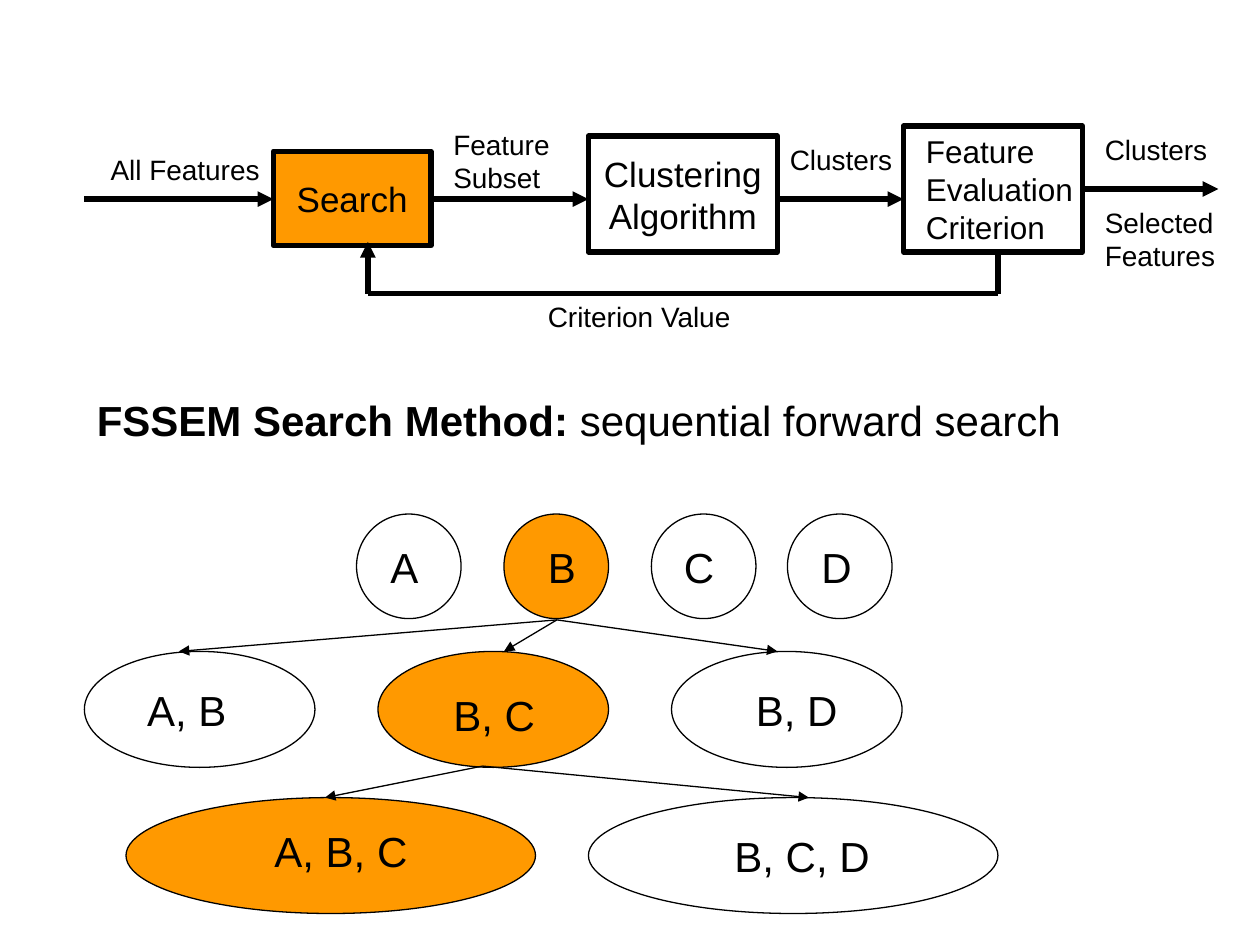
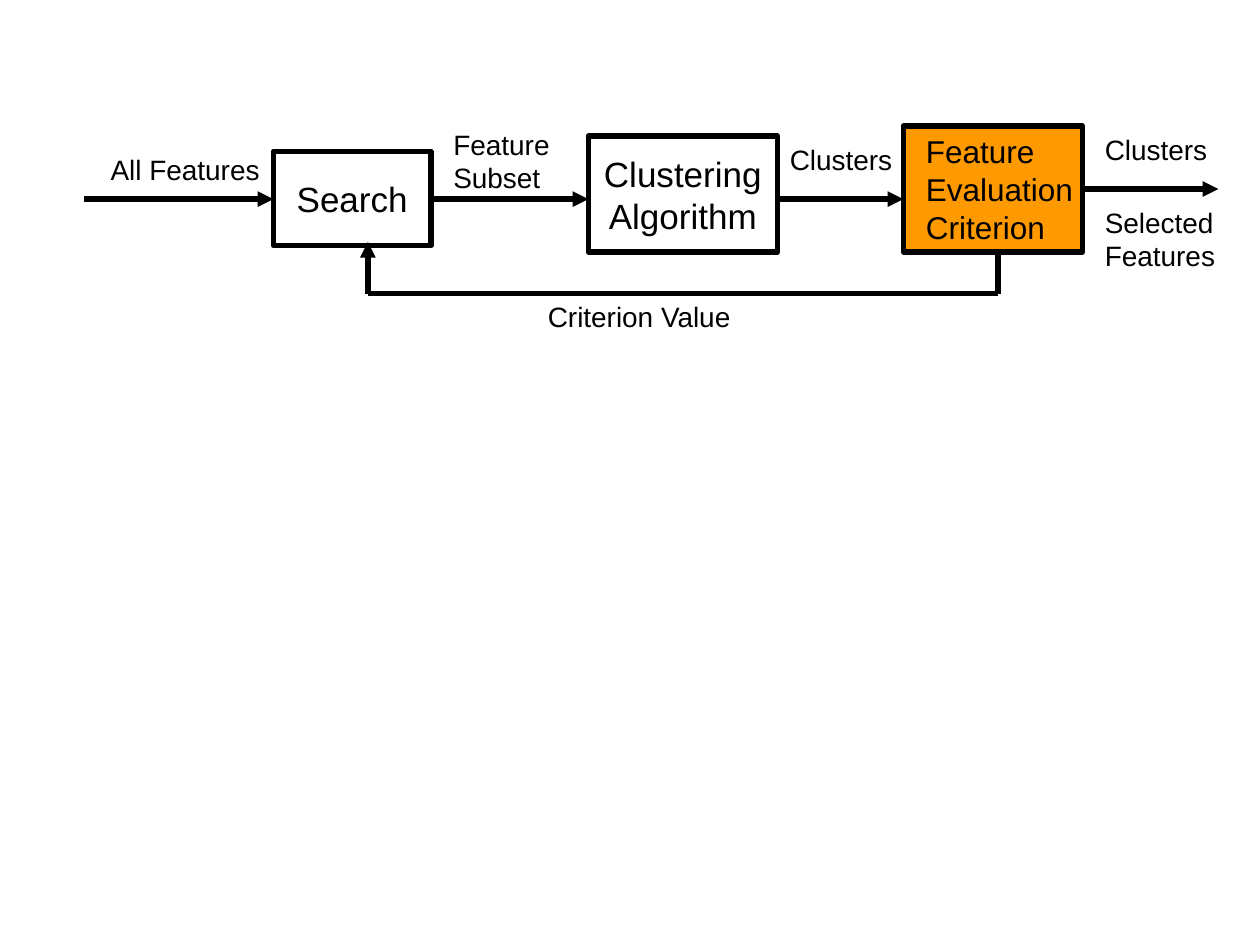
from dataclasses import dataclass

from lxml import etree
from pptx import Presentation
from pptx.dml.color import RGBColor
from pptx.enum.shapes import MSO_CONNECTOR, MSO_SHAPE
from pptx.enum.text import MSO_ANCHOR, MSO_AUTO_SIZE, PP_ALIGN
from pptx.oxml.ns import qn
from pptx.util import Inches, Pt

RECT, OVAL = MSO_SHAPE.RECTANGLE, MSO_SHAPE.OVAL
LINE = MSO_CONNECTOR.STRAIGHT
LEFT, CENTER = PP_ALIGN.LEFT, PP_ALIGN.CENTER
TOP, MIDDLE = MSO_ANCHOR.TOP, MSO_ANCHOR.MIDDLE
FIT, FIXED = MSO_AUTO_SIZE.SHAPE_TO_FIT_TEXT, MSO_AUTO_SIZE.NONE


@dataclass(frozen=True)
class Theme:
    ink: RGBColor = RGBColor(0, 0, 0)
    accent: RGBColor = RGBColor(0xFF, 0x99, 0x00)
    font: str = "Arial"
    label: int = 16
    small: int = 18
    box: int = 20
    head: int = 24
    thick: float = 3
    thin: float = 0.75


THEME = Theme()

# Flow chart: stage name -> (left, top, width, height), centred lines
STAGES = {
    "search": ((2.17, 1.2, 1.25, 0.75), ["Search"]),
    "judge": ((7.17, 1, 1.42, 1), []),
    "cluster": ((4.67, 1.08, 1.5, 0.92), ["Clustering", "Algorithm"]),
}
JUDGE = ((7.25, 1, 1.37, 1), ["Feature", "Evaluation", "Criterion"])
LABELS = [
    ((0.78, 1.16, 1.39, 0.37), ["All Features"]),
    ((3.5, 0.96, 0.97, 0.64), ["Feature", "Subset"]),
    ((4.25, 2.33, 1.67, 0.37), ["Criterion Value"]),
    ((8.67, 1, 1.02, 0.37), ["Clusters"]),
    ((8.67, 1.58, 1.08, 0.64), ["Selected", "Features"]),
    ((6.17, 1.08, 1.02, 0.37), ["Clusters"]),
]
# Each route is a run of points with an arrowhead at its end
ROUTES = [
    [(0.67, 1.58), (2.17, 1.58)],
    [(3.4, 1.58), (4.67, 1.58)],
    [(6.17, 1.58), (7.17, 1.58)],
    [(8.58, 1.5), (9.67, 1.5)],
    [(7.92, 2), (7.92, 2.33), (2.92, 2.33), (2.92, 1.92)],
]

# Search tree
TITLE = ((0.67, 3.08, 7.85, 0.5), "FSSEM Search Method:",
         " sequential forward search")
# Level: top, node width, node height,
# nodes as (name, left, label left, label top, label width)
LEVELS = [
    (4.08, 0.83, 0.83, [("A", 2.83, 3, 4.25, 0.42),
                        ("B", 4, 4.25, 4.25, 0.42),
                        ("C", 5.17, 5.33, 4.25, 0.44),
                        ("D", 6.25, 6.42, 4.25, 0.44)]),
    (5.17, 1.83, 0.92, [("A, B", 0.67, 1.07, 5.38, 0.83),
                        ("B, C", 3, 3.5, 5.42, 0.85),
                        ("B, D", 5.33, 5.9, 5.38, 0.85)]),
    (6.33, 3.25, 0.92, [("A, B, C", 1, 2.08, 6.5, 1.26),
                        ("B, C, D", 4.67, 5.73, 6.54, 1.28)]),
]
CHOSEN = {"B", "B, C", "A, B, C"}
# Fan of arrows: start point, tip height, tip positions
FANS = [((4.42, 4.92), 5.17, [4, 1.42, 6.17]),
        ((3.83, 6.08), 6.33, [2.58, 6.42])]


def write(frame, lines, size=THEME.label, align=LEFT, anchor=TOP,
          fit=FIT, lead=""):
    """Fill a text frame; lead is a bold opening to the first line."""
    frame.word_wrap = False
    frame.auto_size = fit
    frame.vertical_anchor = anchor
    for i, line in enumerate(lines):
        para = frame.paragraphs[0] if i == 0 else frame.add_paragraph()
        para.alignment = align
        parts = [(line, False)]
        if lead and i == 0:
            parts.insert(0, (lead, True))
        for text, bold in parts:
            run = para.add_run()
            run.text = text
            run.font.name = THEME.font
            run.font.size = Pt(size)
            run.font.bold = bold
            run.font.color.rgb = THEME.ink


def label(slide, place, lines, **form):
    box = slide.shapes.add_textbox(*map(Inches, place))
    write(box.text_frame, lines, **form)


def block(slide, kind, place, width, lit):
    shape = slide.shapes.add_shape(kind, *map(Inches, place))
    shape.shadow.inherit = False
    if lit:
        shape.fill.solid()
        shape.fill.fore_color.rgb = THEME.accent
    else:
        shape.fill.background()
    shape.line.color.rgb = THEME.ink
    shape.line.width = Pt(width)
    return shape


def route(slide, points, width):
    """Join the points with lines and put an arrowhead on the last."""
    for start, end in zip(points, points[1:]):
        line = slide.shapes.add_connector(LINE, *map(Inches, start + end))
        line.line.color.rgb = THEME.ink
        line.line.width = Pt(width)
        props = line._element.spPr
        etree.SubElement(props, qn("a:effectLst"))
    etree.SubElement(props.find(qn("a:ln")), qn("a:tailEnd"), type="triangle")


def flow(slide, active):
    for name, (place, lines) in STAGES.items():
        shape = block(slide, RECT, place, THEME.thick, name == active)
        write(shape.text_frame, lines, size=THEME.box, align=CENTER,
              anchor=MIDDLE, fit=FIXED)
    label(slide, *JUDGE, size=THEME.small)
    for place, lines in LABELS:
        label(slide, place, lines)
    for points in ROUTES:
        route(slide, points, THEME.thick)


def tree(slide):
    place, lead, rest = TITLE
    label(slide, place, [rest], size=THEME.head, lead=lead)
    for top, wide, high, nodes in LEVELS:
        for name, left, x, y, span in nodes:
            block(slide, OVAL, (left, top, wide, high), THEME.thin,
                  name in CHOSEN)
            label(slide, (x, y, span, 0.5), [name], size=THEME.head)
    for start, low, tips in FANS:
        for tip in tips:
            route(slide, [start, (tip, low)], THEME.thin)


def main():
    deck = Presentation()
    deck.slide_width, deck.slide_height = Inches(10), Inches(7.5)
    blank = deck.slide_layouts[6]

    # Search step
    first = deck.slides.add_slide(blank)
    flow(first, "search")
    tree(first)

    # Evaluation step
    flow(deck.slides.add_slide(blank), "judge")
    deck.save("out.pptx")


if __name__ == "__main__":
    main()
